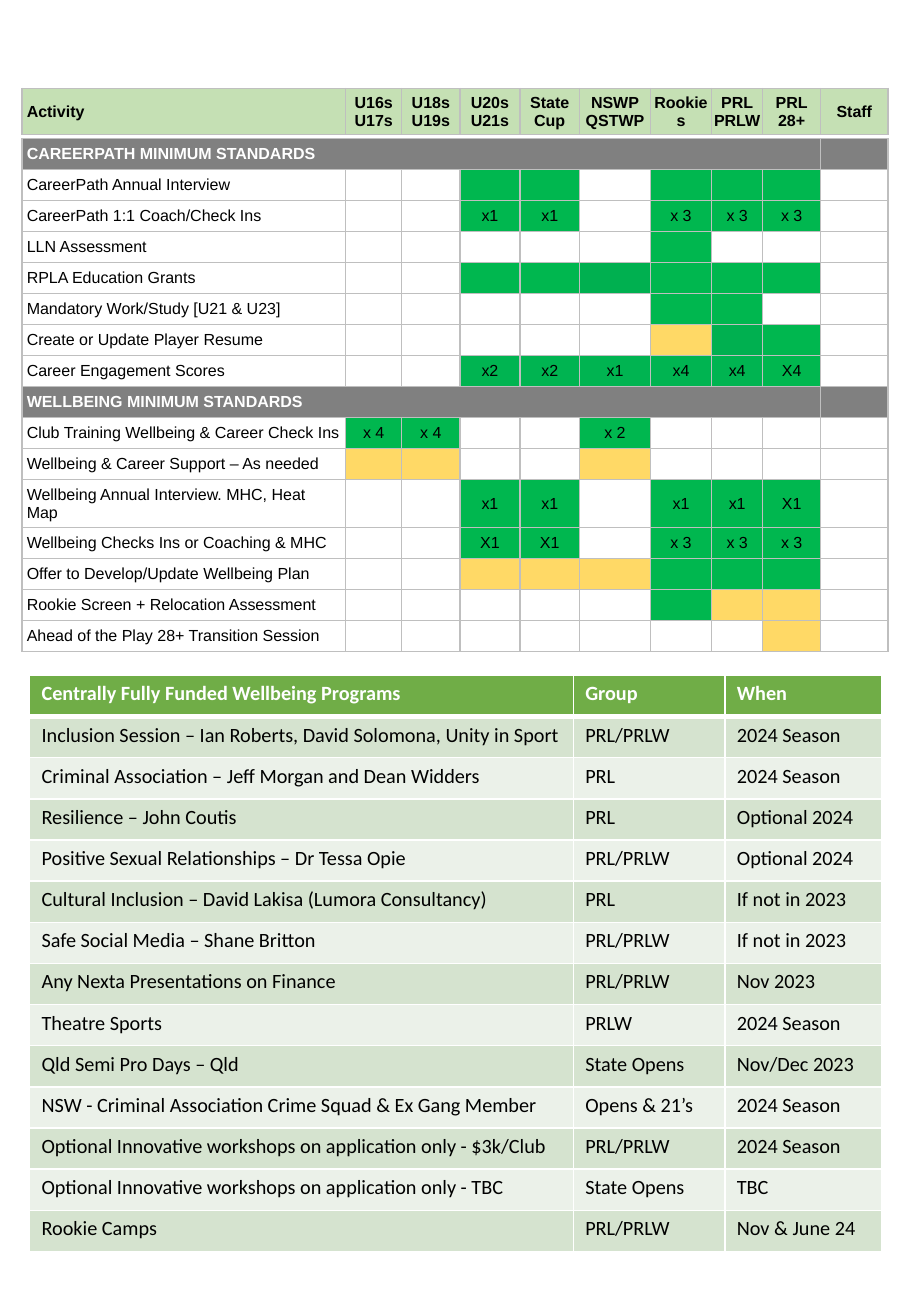
"""Build a one-page overview of player activity standards and funded wellbeing programs."""
from dataclasses import dataclass

from lxml.etree import SubElement
from pptx import Presentation
from pptx.dml.color import RGBColor
from pptx.enum.text import MSO_ANCHOR as Anchor, PP_ALIGN as Align
from pptx.oxml.ns import qn
from pptx.util import Cm, Pt

BLACK, WHITE = "000000", "FFFFFF"
BAND_GREY, LINE_GREY, HEADER_GREEN = "808080", "BFBFBF", "C5E0B4"
MARK_FILLS = {"G": "00B74F", "D": "00B050", "M": "00B451", "Y": "FFD966", "": ""}
PROGRAM_HEADER, PROGRAM_STRIPES = "70AD47", ("EBF1E9", "D5E3CF")


@dataclass(frozen=True)
class Entry:
    """One table cell: its text, look and span."""
    text: str = ""
    fill: str = ""
    color: str = BLACK
    bold: bool = False
    centered: bool = False
    span: int = 1
    side_margin: float = 0.1
    top_line: float = 1
    bottom_line: float = 1


@dataclass(frozen=True)
class Grid:
    """Placement and shared style of one table, in centimetres and points."""
    left: float
    top: float
    columns: tuple[float, ...]
    row_height: float
    font: str
    size: float
    line_color: str
    anchor: Anchor
    vertical_margin: float


ACTIVITY_COLUMNS = (6.77, 1.17, 1.22, 1.25, 1.25, 1.48, 1.28, 1.07, 1.21, 1.41)
HEADER_GRID = Grid(0.46, 1.85, ACTIVITY_COLUMNS, 0.96, "Arial", 9.5, LINE_GREY, Anchor.MIDDLE, 0.1)
ACTIVITY_GRID = Grid(0.46, 2.9, ACTIVITY_COLUMNS, 0.63, "Arial", 9.5, LINE_GREY, Anchor.MIDDLE, 0.12)
PROGRAM_GRID = Grid(0.62, 14.12, (11.37, 3.17, 3.27), 0.86, "Calibri", 12, WHITE, Anchor.TOP, 0.13)

GROUPS = ("U16s\nU17s", "U18s\nU19s", "U20s\nU21s", "State Cup", "NSWP\nQSTWP",
          "Rookies", "PRL\nPRLW", "PRL\n28+", "Staff")

ACTIVITIES = (
    ("CAREERPATH MINIMUM STANDARDS", None),
    ("CareerPath Annual Interview", "||G|G||G|G|G|"),
    ("CareerPath 1:1 Coach/Check Ins", "||G x1|G x1||G x 3|G x 3|G x 3|"),
    ("LLN Assessment", "|||||G|||"),
    ("RPLA Education Grants", "||G|G|D|G|G|G|"),
    ("Mandatory Work/Study [U21 & U23]", "|||||G|G||"),
    ("Create or Update Player Resume", "|||||Y|D|G|"),
    ("Career Engagement Scores", "||M x2|M x2|M x1|M x4|M x4|G X4|"),
    ("WELLBEING MINIMUM STANDARDS", None),
    ("Club Training Wellbeing & Career Check Ins", "G x 4|G x 4|||G x 2||||"),
    ("Wellbeing & Career Support – As needed", "Y|Y|||Y||||"),
    ("Wellbeing Annual Interview. MHC, Heat Map", "||G x1|G x1||G x1|G x1|G X1|"),
    ("Wellbeing Checks Ins or Coaching & MHC", "||G X1|G X1||G x 3|G x 3|G x 3|"),
    ("Offer to Develop/Update Wellbeing Plan", "||Y|Y|Y|G|G|G|"),
    ("Rookie Screen + Relocation Assessment", "|||||G|Y|Y|"),
    ("Ahead of the Play 28+ Transition Session", "|||||||Y|"),
)

PROGRAMS = (
    ("Centrally Fully Funded Wellbeing Programs", "Group", "When"),
    ("Inclusion Session – Ian Roberts, David Solomona, Unity in Sport", "PRL/PRLW", "2024 Season"),
    ("Criminal Association – Jeff Morgan and Dean Widders", "PRL", "2024 Season"),
    ("Resilience – John Coutis", "PRL", "Optional 2024"),
    ("Positive Sexual Relationships – Dr Tessa Opie", "PRL/PRLW", "Optional 2024"),
    ("Cultural Inclusion – David Lakisa (Lumora Consultancy)", "PRL", "If not in 2023"),
    ("Safe Social Media – Shane Britton", "PRL/PRLW", "If not in 2023"),
    ("Any Nexta Presentations on Finance", "PRL/PRLW", "Nov 2023"),
    ("Theatre Sports", "PRLW", "2024 Season"),
    ("Qld Semi Pro Days – Qld", "State Opens", "Nov/Dec 2023"),
    ("NSW - Criminal Association Crime Squad & Ex Gang Member", "Opens & 21’s", "2024 Season"),
    ("Optional Innovative workshops on application only - $3k/Club", "PRL/PRLW", "2024 Season"),
    ("Optional Innovative workshops on application only - TBC", "State Opens", "TBC"),
    ("Rookie Camps", "PRL/PRLW", "Nov & June 24"),
)


def rgb(color: str) -> RGBColor:
    """Turn a hex string into a colour."""
    return RGBColor.from_string(color)


def draw_borders(cell, color: str, entry: Entry) -> None:
    """Draw the four cell borders."""
    properties = cell._tc.get_or_add_tcPr()
    widths = {"lnL": 1, "lnR": 1, "lnT": entry.top_line, "lnB": entry.bottom_line}
    for side, width in widths.items():
        line = SubElement(properties, qn(f"a:{side}"), w=str(Pt(width)))
        SubElement(SubElement(line, qn("a:solidFill")), qn("a:srgbClr"), val=color)


def write_text(cell, grid: Grid, entry: Entry) -> None:
    """Write each line of the entry as a paragraph with one run."""
    for number, line in enumerate(entry.text.split("\n")):
        frame = cell.text_frame
        paragraph = frame.add_paragraph() if number else frame.paragraphs[0]
        paragraph.alignment = Align.CENTER if entry.centered else Align.LEFT
        if not line:
            SubElement(paragraph._p, qn("a:endParaRPr"), sz=str(int(grid.size * 100)))
            continue
        run = paragraph.add_run()
        run.text = line
        run.font.name, run.font.size, run.font.bold = grid.font, Pt(grid.size), entry.bold
        run.font.color.rgb = rgb(entry.color)


def draw_cell(cell, grid: Grid, entry: Entry) -> None:
    """Style and fill one table cell."""
    cell.vertical_anchor = grid.anchor
    cell.margin_left = cell.margin_right = Cm(entry.side_margin)
    cell.margin_top = cell.margin_bottom = Cm(grid.vertical_margin)
    draw_borders(cell, grid.line_color, entry)
    if entry.fill:
        cell.fill.solid()
        cell.fill.fore_color.rgb = rgb(entry.fill)
    else:
        cell.fill.background()
    write_text(cell, grid, entry)


def draw_table(slide, grid: Grid, rows: list[list[Entry]]) -> None:
    """Add a table holding the given rows."""
    table = slide.shapes.add_table(
        len(rows), len(grid.columns), Cm(grid.left), Cm(grid.top),
        Cm(sum(grid.columns)), Cm(grid.row_height * len(rows))).table
    table.first_row = table.horz_banding = False
    for column, width in zip(table.columns, grid.columns):
        column.width = Cm(width)
    for row_number, entries in enumerate(rows):
        table.rows[row_number].height = Cm(grid.row_height)
        for column_number, entry in enumerate(entries):
            cell = table.cell(row_number, column_number)
            draw_cell(cell, grid, entry)
            if entry.span > 1:
                cell.merge(table.cell(row_number, column_number + entry.span - 1))


def activity_row(title: str, marks: str | None) -> list[Entry]:
    """Make a section band or a row of marks."""
    if marks is None:
        band = Entry(title, BAND_GREY, WHITE, bold=True, span=9)
        return [band] + [Entry(fill=BAND_GREY)] * 9
    row = [Entry(title)]
    for mark in marks.split("|"):
        code, _, label = mark.partition(" ")
        row.append(Entry(label, MARK_FILLS[code], centered=True))
    return row


def program_row(number: int, texts: tuple[str, ...]) -> list[Entry]:
    """Make the program header or a striped row."""
    if number == 0:
        return [Entry(text, PROGRAM_HEADER, WHITE, bold=True, side_margin=0.25, bottom_line=3)
                for text in texts]
    return [Entry(text, PROGRAM_STRIPES[number % 2], side_margin=0.25,
                  top_line=3 if number == 1 else 1) for text in texts]


def main() -> None:
    """Build and save the slide."""
    presentation = Presentation()
    presentation.slide_width, presentation.slide_height = Cm(19.05), Cm(27.51)
    slide = presentation.slides.add_slide(presentation.slide_layouts[6])
    header = [Entry("Activity", HEADER_GREEN, bold=True)]
    header += [Entry(group, HEADER_GREEN, bold=True, centered=True, side_margin=0)
               for group in GROUPS]
    draw_table(slide, ACTIVITY_GRID, [activity_row(*activity) for activity in ACTIVITIES])
    draw_table(slide, HEADER_GRID, [header])
    draw_table(slide, PROGRAM_GRID, [program_row(*item) for item in enumerate(PROGRAMS)])
    presentation.save("out.pptx")


if __name__ == "__main__":
    main()
